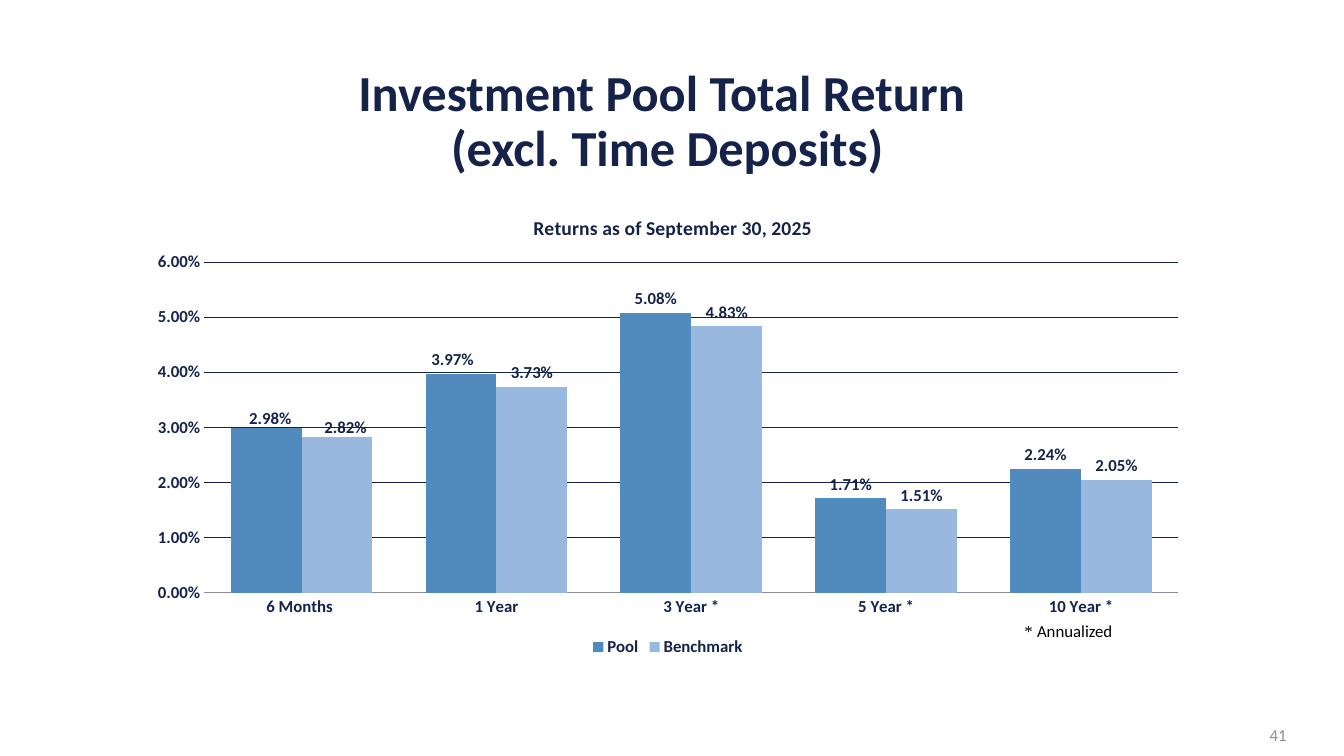
from dataclasses import dataclass, field

from lxml.etree import SubElement
from pptx import Presentation
from pptx.chart.data import CategoryChartData
from pptx.dml.color import RGBColor
from pptx.enum.chart import XL_CHART_TYPE, XL_LABEL_POSITION, XL_LEGEND_POSITION, XL_TICK_MARK
from pptx.enum.text import MSO_ANCHOR, PP_ALIGN
from pptx.oxml.ns import qn
from pptx.util import Inches, Pt


@dataclass(frozen=True)
class Theme:
    title: str = "152249"
    navy: str = "15234A"
    gray: str = "8C8D96"
    black: str = "000000"
    pool: str = "518ABD"
    benchmark: str = "98B8E0"
    font: str = "Calibri"
    serif: str = "Times New Roman"
    title_size: int = 36
    heading_size: int = 14
    body_size: int = 12
    small_size: int = 10


T = Theme()


@dataclass(frozen=True)
class Run:
    text: str
    color: str
    size: int = T.body_size
    name: str = T.font
    bold: bool = False


@dataclass(frozen=True)
class Label:
    box: tuple[float, float, float, float]
    runs: list[Run]
    align: PP_ALIGN = PP_ALIGN.CENTER
    anchor: MSO_ANCHOR = MSO_ANCHOR.MIDDLE
    spacing: float = 1.0


@dataclass(frozen=True)
class Series:
    name: str
    color: str
    values: list[float]
    offsets: dict[int, tuple[float, float]] = field(default_factory=dict)


LABELS = [
    Label((2.12, 0.59, 9, 1.25),
          [Run("Investment Pool Total Return \v(excl. Time Deposits)", T.title, T.title_size, bold=True)],
          spacing=0.9),
    Label((8.83, 6.11, 3.5, 0.3),
          [Run(" ", T.black, T.small_size, T.serif), Run("* ", T.black, name=T.serif),
           Run("Annualized", T.black)], anchor=MSO_ANCHOR.TOP),
    Label((9.86, 7.09, 3, 0.4), [Run("41", T.gray)], align=PP_ALIGN.RIGHT),
]
PERIODS = ["6 Months ", "1 Year", "3 Year *", "5 Year *", "10 Year *"]
SERIES = [
    Series("Pool", T.pool, [0.0298, 0.0397, 0.0508, 0.0171, 0.0224], {0: (0.004, 0.01), 1: (-0.008, 0)}),
    Series("Benchmark", T.benchmark, [0.0282, 0.0373, 0.0483, 0.0151, 0.0205], {0: (0.008, 0.01)}),
]
PERCENT = "0.00%"


def set_font(font, color: str, size: int = T.body_size, name: str = T.font, bold: bool = True) -> None:
    for key, value in {"size": Pt(size), "name": name, "bold": bold}.items():
        setattr(font, key, value)
    font.color.rgb = RGBColor.from_string(color)


def set_line(line, color: str) -> None:
    line.color.rgb = RGBColor.from_string(color)
    line.width = Pt(0.5)


def add_label(s, label: Label) -> None:
    tf = s.shapes.add_textbox(*map(Inches, label.box)).text_frame
    tf.word_wrap = True
    tf.vertical_anchor = label.anchor
    p = tf.paragraphs[0]
    p.alignment = label.align
    p.line_spacing = label.spacing
    for run in label.runs:
        for i, text in enumerate(run.text.split("\v")):
            if i:
                p.add_line_break()
            r = p.add_run()
            r.text = text
            set_font(r.font, run.color, run.size, run.name, run.bold)


def set_layout(parent, index: int, **values: str | float) -> None:
    for old in parent.findall(qn("c:layout")):
        parent.remove(old)
    layout = SubElement(parent, qn("c:layout"))
    parent.insert(index, layout)
    manual = SubElement(layout, qn("c:manualLayout"))
    for key, value in values.items():
        SubElement(manual, qn(f"c:{key}")).set("val", str(value))


def style_series(plot_series, series: Series) -> None:
    fill = plot_series.format.fill
    fill.solid()
    fill.fore_color.rgb = RGBColor.from_string(series.color)
    labels = plot_series.data_labels
    formats = {"show_value": True, "number_format": PERCENT, "number_format_is_linked": False,
               "position": XL_LABEL_POSITION.OUTSIDE_END}
    for key, value in formats.items():
        setattr(labels, key, value)
    set_font(labels.font, T.navy)
    for i, (x, y) in series.offsets.items():
        label = plot_series.points[i].data_label
        set_font(label.font, T.navy)
        label.position = XL_LABEL_POSITION.OUTSIDE_END
        set_layout(labels._element.findall(qn("c:dLbl"))[-1], 1, x=x, y=y)


def add_returns_chart(s) -> None:
    data = CategoryChartData(number_format=PERCENT)
    data.categories = PERIODS
    for series in SERIES:
        data.add_series(series.name, series.values)
    box = map(Inches, (1.35, 1.9, 10.55, 4.66))
    chart = s.shapes.add_chart(XL_CHART_TYPE.COLUMN_CLUSTERED, *box, data).chart
    set_font(chart.font, T.navy)

    chart.has_title = True
    title = chart.chart_title
    p = title.text_frame.paragraphs[0]
    r = p.add_run()
    r.text = "Returns as of September 30, 2025"
    set_font(r.font, T.navy, T.heading_size)
    set_layout(title._element, 1, xMode="edge", yMode="edge", x=0.37, y=0.04)

    chart.has_legend = True
    chart.legend.position = XL_LEGEND_POSITION.BOTTOM
    chart.legend.include_in_layout = False
    set_font(chart.legend.font, T.navy)

    for axis in (chart.category_axis, chart.value_axis):
        axis.major_tick_mark = axis.minor_tick_mark = XL_TICK_MARK.NONE
        set_font(axis.tick_labels.font, T.navy)
    set_line(chart.category_axis.format.line, T.gray)
    values = chart.value_axis
    for key, value in {"minimum_scale": 0, "maximum_scale": 0.06, "major_unit": 0.01}.items():
        setattr(values, key, value)
    values.tick_labels.number_format = PERCENT
    values.tick_labels.number_format_is_linked = False
    values.format.line.fill.background()
    set_line(values.major_gridlines.format.line, T.navy)

    plot = chart.plots[0]
    plot.gap_width = 75
    plot.overlap = 0
    plot.vary_by_categories = False
    for plot_series, series in zip(plot.series, SERIES):
        style_series(plot_series, series)
    set_layout(plot._element.getparent(), 0, layoutTarget="inner", xMode="edge", yMode="edge",
               x=0.064, y=0.15, w=0.916, h=0.704)


def main() -> None:
    prs = Presentation()
    prs.slide_width, prs.slide_height = Inches(13.33), Inches(7.5)
    s = prs.slides.add_slide(prs.slide_layouts[6])
    add_returns_chart(s)
    for label in LABELS:
        add_label(s, label)
    prs.save("out.pptx")


if __name__ == "__main__":
    main()
